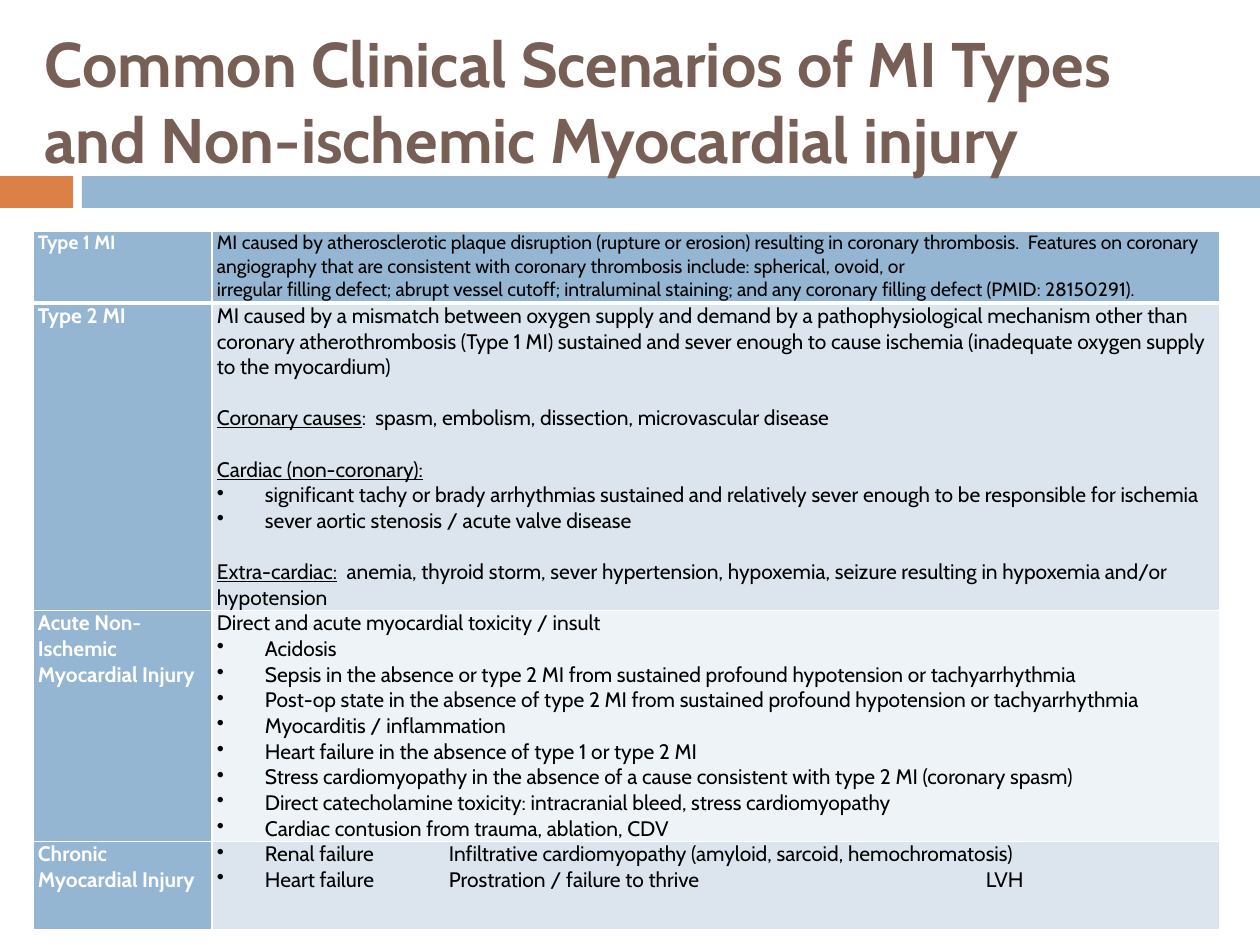
from dataclasses import dataclass

from lxml.etree import SubElement
from pptx import Presentation
from pptx.dml.color import RGBColor
from pptx.enum.shapes import MSO_SHAPE
from pptx.enum.text import MSO_ANCHOR, MSO_AUTO_SIZE, PP_ALIGN
from pptx.oxml.ns import qn
from pptx.util import Emu, Pt

PX = 914400 // 126
FONT = "Cabin"
BROWN = RGBColor(0x77, 0x5F, 0x55)
ORANGE = RGBColor(0xDD, 0x80, 0x47)
BLUE = RGBColor(0x94, 0xB6, 0xD2)
PALE = RGBColor(0xDC, 0xE5, 0xEE)
PALER = RGBColor(0xEE, 0xF3, 0xF7)
WHITE = RGBColor(0xFF, 0xFF, 0xFF)
BLACK = RGBColor(0, 0, 0)

COLUMN_WIDTHS = (179, 1008)
ROW_HEIGHTS = (72, 295, 228, 88)
BULLET_INDENT = 48
TAB_STOPS = (232, 769)
LINE_GAP = Pt(14.6)


@dataclass
class Line:
    text: str
    lead: str = ""  # underlined opening words
    bullet: bool = False
    gap: bool = False  # one line of space above


def bullets(*texts):
    return [Line(text, bullet=True) for text in texts]


# Each row: type names, description lines, description fill, text size
SCENARIOS = [
    ([Line("Type 1 MI")], [
        Line("MI caused by atherosclerotic plaque disruption (rupture or erosion) resulting in "
             "coronary thrombosis.  Features on coronary angiography that are consistent with "
             "coronary thrombosis include: spherical, ovoid, or"),
        Line("irregular filling defect; abrupt vessel cutoff; intraluminal staining; and any "
             "coronary filling defect (PMID: 28150291)."),
    ], BLUE, 11),
    ([Line("Type 2 MI")], [
        Line("MI caused by a mismatch between oxygen supply and demand by a pathophysiological "
             "mechanism other than coronary atherothrombosis (Type 1 MI) sustained and sever "
             "enough to cause ischemia (inadequate oxygen supply to the myocardium)"),
        Line(":  spasm, embolism, dissection, microvascular disease",
             lead="Coronary causes", gap=True),
        Line("", lead="Cardiac (non-coronary):", gap=True),
        *bullets(
            "significant tachy or brady arrhythmias sustained and relatively sever enough to be "
            "responsible for ischemia",
            "sever aortic stenosis / acute valve disease"),
        Line("  anemia, thyroid storm, sever hypertension, hypoxemia, seizure resulting in "
             "hypoxemia and/or hypotension", lead="Extra-cardiac:", gap=True),
    ], PALE, 12),
    ([Line("Acute Non-Ischemic"), Line("Myocardial Injury")], [
        Line("Direct and acute myocardial toxicity / insult"),
        *bullets(
            "Acidosis",
            "Sepsis in the absence or type 2 MI from sustained profound hypotension or "
            "tachyarrhythmia",
            "Post-op state in the absence of type 2 MI from sustained profound hypotension or "
            "tachyarrhythmia",
            "Myocarditis / inflammation",
            "Heart failure in the absence of type 1 or type 2 MI",
            "Stress cardiomyopathy in the absence of a cause consistent with type 2 MI "
            "(coronary spasm)",
            "Direct catecholamine toxicity: intracranial bleed, stress cardiomyopathy",
            "Cardiac contusion from trauma, ablation, CDV"),
    ], PALER, 12),
    ([Line("Chronic Myocardial Injury")], bullets(
        "Renal failure\tInfiltrative cardiomyopathy (amyloid, sarcoid, hemochromatosis)",
        "Heart failure\tProstration / failure to thrive\tLVH",
    ), PALE, 12),
]


def px(length):
    return Emu(length * PX)


def set_font(paragraph, size, color, bold):
    font = paragraph.font
    font.name, font.size, font.bold = FONT, Pt(size), bold
    font.color.rgb = color


def add_bar(slide, left, width, color):
    bar = slide.shapes.add_shape(MSO_SHAPE.RECTANGLE, px(left), px(176), px(width), px(32))
    bar.shadow.inherit = False
    bar.fill.solid()
    bar.fill.fore_color.rgb = color
    bar.line.fill.background()


def set_title(slide, text):
    title = slide.shapes.title
    title.left, title.top, title.width, title.height = px(32), px(32), px(1177), px(136)
    frame = title.text_frame
    frame.text = text
    frame.word_wrap = True
    frame.auto_size = MSO_AUTO_SIZE.NONE
    frame.vertical_anchor = MSO_ANCHOR.MIDDLE
    heading = frame.paragraphs[0]
    heading.alignment = PP_ALIGN.LEFT
    set_font(heading, 36, BROWN, True)
    # Bring the heading in front of the bars
    slide.shapes.element.append(title.element)


def set_bullet(paragraph, tabbed):
    properties = paragraph._p.get_or_add_pPr()
    properties.set("marL", str(px(BULLET_INDENT)))
    properties.set("indent", str(-px(BULLET_INDENT)))
    SubElement(properties, qn("a:buChar"), char="•")
    if tabbed:
        stops = SubElement(properties, qn("a:tabLst"))
        for stop in TAB_STOPS:
            SubElement(stops, qn("a:tab"), pos=str(px(stop)), algn="l")


def set_borders(cell, top, bottom):
    properties = cell._tc.get_or_add_tcPr()
    for side, width in (("L", 1), ("R", 1), ("T", top), ("B", bottom)):
        border = SubElement(properties, qn(f"a:ln{side}"), w=str(Pt(width)))
        fill = SubElement(border, qn("a:solidFill"))
        SubElement(fill, qn("a:srgbClr"), val=str(WHITE))


def fill_cell(cell, lines, fill, size, color, bold):
    cell.margin_left = cell.margin_right = px(5)
    cell.margin_top = cell.margin_bottom = 0
    cell.fill.solid()
    cell.fill.fore_color.rgb = fill
    frame = cell.text_frame
    for number, line in enumerate(lines):
        paragraph = frame.add_paragraph() if number else frame.paragraphs[0]
        if line.bullet:
            set_bullet(paragraph, "\t" in line.text)
        if line.gap:
            paragraph.space_before = LINE_GAP
        set_font(paragraph, size, color, bold)
        if line.lead:
            lead = paragraph.add_run()
            lead.text = line.lead
            lead.font.underline = True
        if line.text:
            paragraph.add_run().text = line.text


def add_scenarios(slide):
    table = slide.shapes.add_table(
        len(ROW_HEIGHTS), len(COLUMN_WIDTHS), px(33), px(231),
        px(sum(COLUMN_WIDTHS)), px(sum(ROW_HEIGHTS))).table
    table.first_row = table.horz_banding = False
    for column, width in zip(table.columns, COLUMN_WIDTHS):
        column.width = px(width)
    for number, (names, description, fill, size) in enumerate(SCENARIOS):
        table.rows[number].height = px(ROW_HEIGHTS[number])
        name_cell, description_cell = table.cell(number, 0), table.cell(number, 1)
        # A thicker rule parts the first row from the rest
        for cell in (name_cell, description_cell):
            set_borders(cell, top=3 if number == 1 else 1, bottom=3 if number == 0 else 1)
        fill_cell(name_cell, names, BLUE, size, WHITE, True)
        fill_cell(description_cell, description, fill, size, BLACK, False)


def main():
    presentation = Presentation()
    presentation.slide_width, presentation.slide_height = px(1260), px(945)
    slide = presentation.slides.add_slide(presentation.slide_layouts[5])
    # Bars under the heading
    add_bar(slide, 0, 73, ORANGE)
    add_bar(slide, 82, 1178, BLUE)
    set_title(slide, "Common Clinical Scenarios of MI Types and Non-ischemic Myocardial injury")
    add_scenarios(slide)
    presentation.save("out.pptx")


if __name__ == "__main__":
    main()
